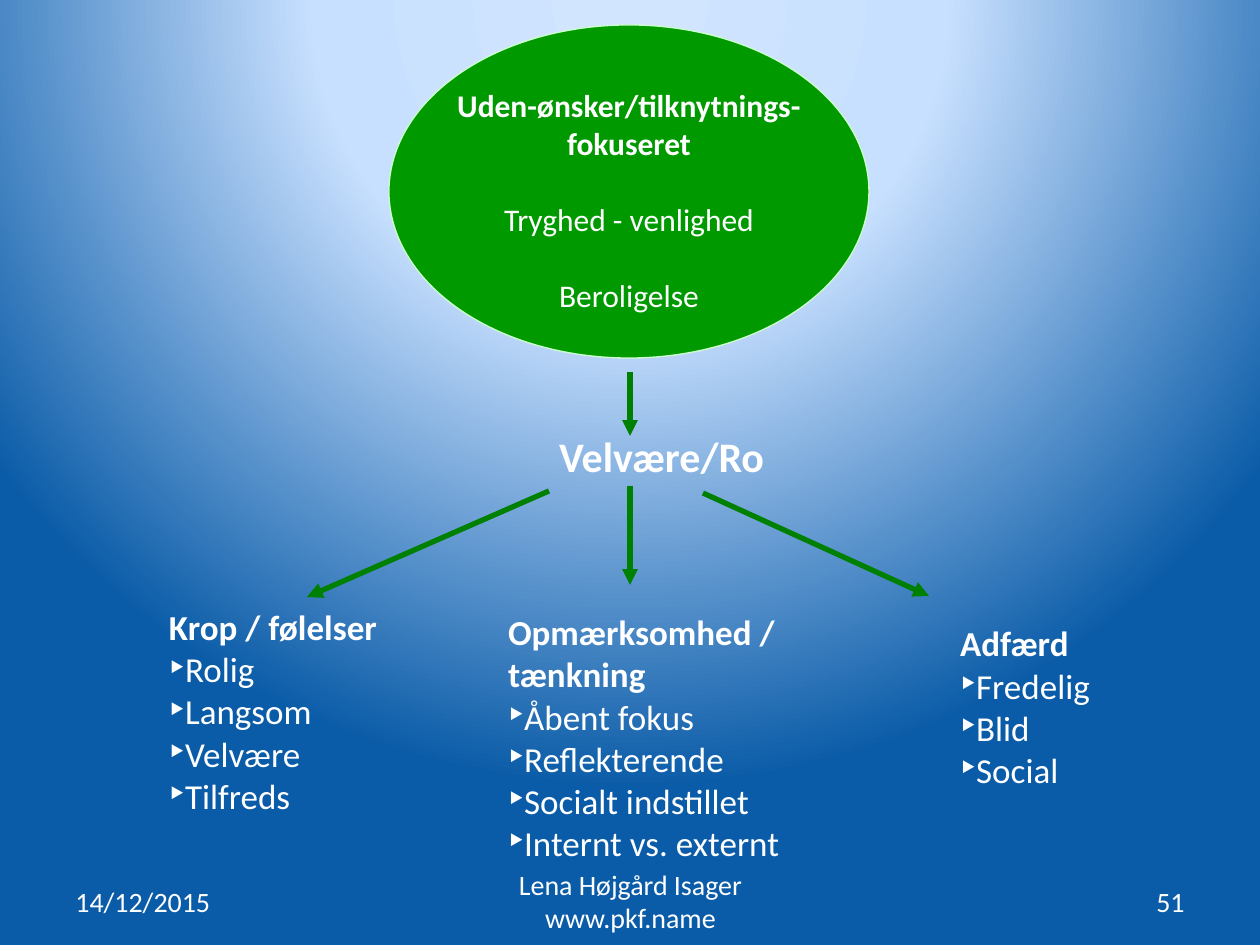
import pptx
import pptx.util
import pptx.oxml
import pptx.oxml.ns
import pptx.dml.color
import pptx.enum.shapes
import pptx.enum.text
import lxml.etree

RGB = pptx.dml.color.RGBColor
WHITE = RGB(0xFF, 0xFF, 0xFF)
GREEN = RGB(0x00, 0x99, 0x00)
DARK = RGB(0x00, 0x80, 0x00)
PALE = RGB(0xCC, 0xFF, 0xCC)
STOPS = [(0, RGB(0xD1, 0xE5, 0xFF)), (40, RGB(0xC8, 0xE0, 0xFF)), (100, RGB(0x0B, 0x5C, 0xA8))]
ALIGN = pptx.enum.text.PP_ALIGN
MID = pptx.enum.text.MSO_ANCHOR.MIDDLE
GROW = pptx.enum.text.MSO_AUTO_SIZE.SHAPE_TO_FIT_TEXT
FONT = "Calibri"
SCALE = 914400 / 126


def px(num):
    return pptx.util.Emu(round(num * SCALE))


def sub(node, tag, **attrs):
    return lxml.etree.SubElement(node, pptx.oxml.ns.qn(tag), attrs)


def write(para, text, size=20, bold=False, align=None, indent=0, bullet=False, gap=0):
    props = para._p.get_or_add_pPr()
    if indent:
        props.set("marL", str(px(indent)))
        props.set("indent", "0")
    if bullet:
        sub(props, "a:buSzPct", val="125000")
        sub(props, "a:buFont", typeface=FONT)
        sub(props, "a:buChar", char="‣")
    para.text = text
    if align is not None:
        para.alignment = align
    if gap:
        para.space_before = pptx.util.Pt(gap)
    for run in para.runs:
        run.font.name = FONT
        run.font.size = pptx.util.Pt(size)
        run.font.bold = bold
        run.font.color.rgb = WHITE


class Deck:
    def __init__(self):
        self.file = pptx.Presentation()
        self.file.slide_width, self.file.slide_height = px(1260), px(945)
        self.slide = self.file.slides.add_slide(self.file.slide_layouts[6])

    def back(self):
        stops = "".join(
            f'<a:gs pos="{pos * 1000}"><a:srgbClr val="{color}"/></a:gs>' for pos, color in STOPS
        )
        names = pptx.oxml.ns.nsdecls("p", "a")
        self.slide.element.cSld.insert(0, pptx.oxml.parse_xml(
            f'<p:bg {names}><p:bgPr><a:gradFill rotWithShape="1"><a:gsLst>{stops}</a:gsLst>'
            '<a:path path="circle"><a:fillToRect l="50000" t="-80000" r="50000" b="180000"/></a:path>'
            '</a:gradFill><a:effectLst/></p:bgPr></p:bg>'
        ))

    def oval(self, *box):
        shape = self.slide.shapes.add_shape(pptx.enum.shapes.MSO_SHAPE.OVAL, *map(px, box))
        shape.shadow.inherit = False
        shape.fill.solid()
        shape.fill.fore_color.rgb = GREEN
        shape.line.color.rgb = PALE
        shape.line.width = pptx.util.Pt(0.75)

    def arrow(self, *ends):
        line = self.slide.shapes.add_connector(
            pptx.enum.shapes.MSO_CONNECTOR.STRAIGHT, *map(px, ends))
        line.line.color.rgb = DARK
        line.line.width = pptx.util.Pt(3)
        sub(line.line._get_or_add_ln(), "a:tailEnd", type="triangle")
        sub(line._element.spPr, "a:effectLst")

    def text(self, box, paras, pad=(0, 0, 5, 0), wrap=False, grow=True, anchor=None):
        frame = self.slide.shapes.add_textbox(*map(px, box)).text_frame
        frame.word_wrap = wrap
        if grow:
            frame.auto_size = GROW
        if anchor is not None:
            frame.vertical_anchor = anchor
        if pad:
            (frame.margin_left, frame.margin_top,
             frame.margin_right, frame.margin_bottom) = map(px, pad)
        for num, (words, form) in enumerate(paras):
            para = frame.add_paragraph() if num else frame.paragraphs[0]
            write(para, words, **form)

    def group(self, box, title, items):
        paras = [(title, dict(bold=True, indent=5))]
        paras += [(item, dict(indent=5, bullet=True)) for item in items]
        self.text(box, paras, wrap=True, grow=False)

    def foot(self, left, width, words, align):
        self.text((left, 876, width, 50), [(words, dict(size=16, align=align))],
                  pad=None, wrap=True, grow=False, anchor=MID)


def main():
    deck = Deck()
    deck.back()
    deck.oval(389, 25, 480, 333)
    for ends in [(703, 493, 929, 596), (630, 486, 630, 585),
                 (549, 491, 307, 597), (630, 372, 630, 436)]:
        deck.arrow(*ends)
    deck.text((554, 431, 218, 50), [("Velvære/Ro", dict(size=24, bold=True, indent=5))])
    deck.group((503, 611, 421, 212), "Opmærksomhed /\vtænkning",
               ["Åbent fokus", "Reflekterende", "Socialt indstillet", "Internt vs. externt"])
    deck.group((164, 606, 226, 164), "Krop / følelser",
               ["Rolig", "Langsom", "Velvære", "Tilfreds"])
    deck.group((955, 622, 170, 212), "Adfærd", ["Fredelig", "Blid", "Social"])
    form = dict(size=18, align=ALIGN.CENTER, indent=3)
    deck.text((451, 83, 358, 234), [
        ("Uden-ønsker/tilknytnings-", dict(form, bold=True)),
        ("fokuseret", dict(form, bold=True)),
        ("Tryghed - venlighed", dict(form, gap=22)),
        ("Beroligelse", dict(form, gap=22)),
    ], pad=(3, 3, 8, 3), anchor=MID)
    deck.foot(431, 399, "Lena Højgård Isager www.pkf.name", ALIGN.CENTER)
    deck.foot(63, 294, "14/12/2015", ALIGN.LEFT)
    deck.foot(903, 294, "51", ALIGN.RIGHT)
    deck.file.save("out.pptx")


if __name__ == "__main__":
    main()
